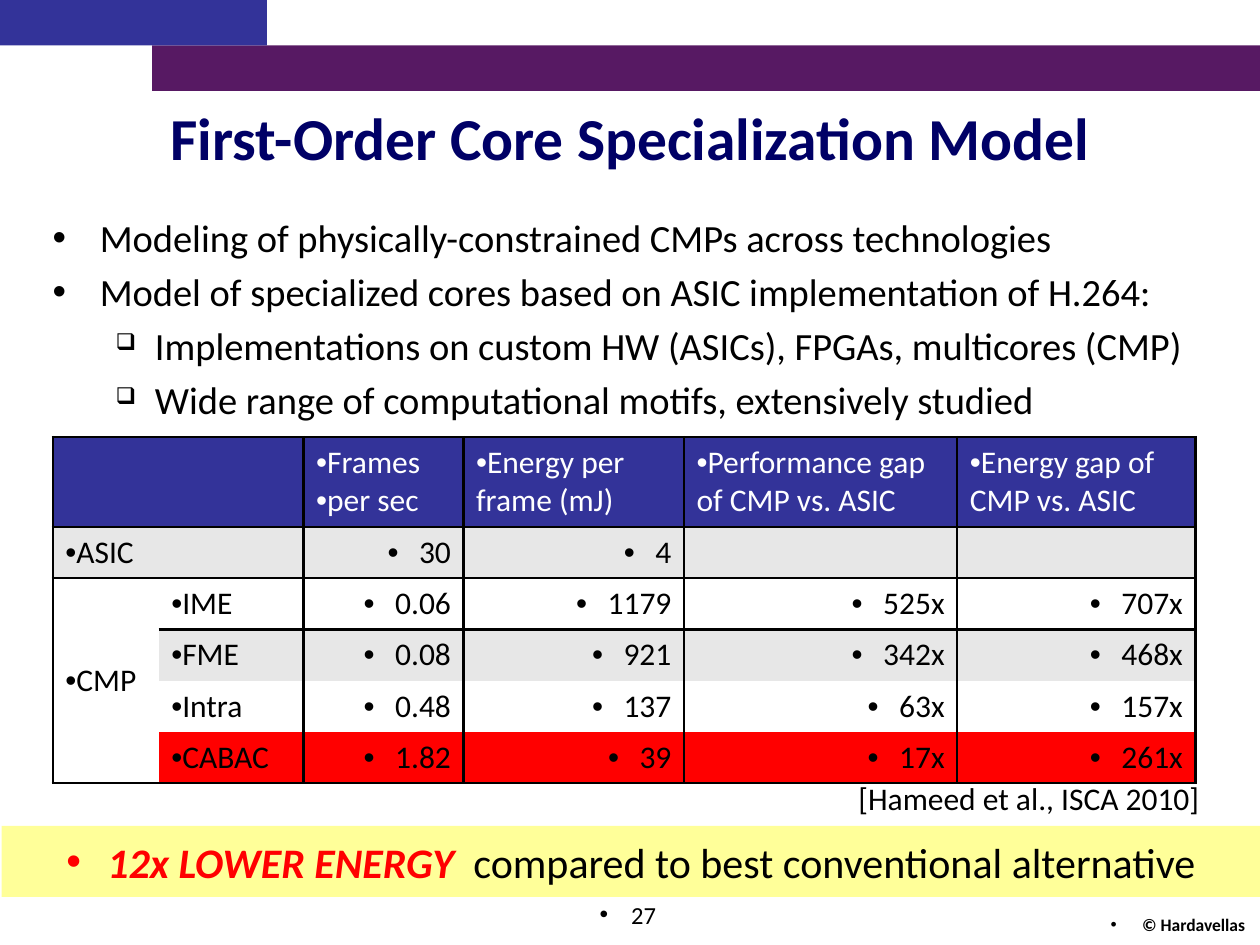
from lxml.etree import SubElement
from pptx import Presentation
from pptx.dml.color import RGBColor
from pptx.enum.shapes import MSO_SHAPE
from pptx.enum.text import MSO_ANCHOR, PP_ALIGN
from pptx.oxml.ns import qn
from pptx.util import Pt

BLUE = RGBColor(0x33, 0x33, 0x99)
PURPLE = RGBColor(0x57, 0x19, 0x63)
NAVY = RGBColor(0x00, 0x00, 0x66)
YELLOW = RGBColor(0xFF, 0xFF, 0x99)
GREY = RGBColor(0xE7, 0xE7, 0xE7)
RED = RGBColor(0xFF, 0x00, 0x00)
BLACK = RGBColor(0x00, 0x00, 0x00)
WHITE = RGBColor(0xFF, 0xFF, 0xFF)

LEFT, MID, RIGHT = PP_ALIGN.LEFT, PP_ALIGN.CENTER, PP_ALIGN.RIGHT
HANG = 18  # bullet indent of centred and right-aligned lines

COLS = [60.5, 82.8, 91.4, 126, 156.2, 136.1]
ROWS = [51.4] + [29.3] * 5
FILLS = [BLUE, GREY, WHITE, GREY, WHITE, RED]
CELLS = [
    ["", "", "Frames\nper sec", "Energy per frame (mJ)",
     "Performance gap of CMP vs. ASIC", "Energy gap of CMP vs. ASIC"],
    ["ASIC", "", "30", "4", "", ""],
    ["CMP", "IME", "0.06", "1179", "525x", "707x"],
    ["", "FME", "0.08", "921", "342x", "468x"],
    ["", "Intra", "0.48", "137", "63x", "157x"],
    ["", "CABAC", "1.82", "39", "17x", "261x"],
]
POINTS = [
    (0, "Modeling of physically-constrained CMPs across technologies"),
    (0, "Model of specialized cores based on ASIC implementation of H.264:"),
    (1, "Implementations on custom HW (ASICs), FPGAs, multicores (CMP)"),
    (1, "Wide range of computational motifs, extensively studied"),
]


def add_run(para, text, size, color=BLACK, **extra):
    run = para.add_run()
    run.text = text
    form = {"name": "Calibri", "size": Pt(size), **extra}
    for key, value in form.items():
        setattr(run.font, key, value)
    run.font.color.rgb = color


def add_mark(para, left=0, hang=0, char="•", scale=100):
    props = para._p.get_or_add_pPr()
    props.set("marL", str(Pt(left)))
    props.set("indent", str(-Pt(hang)))
    SubElement(props, qn("a:buSzPct"), val=str(scale * 1000))
    if char == "•":
        SubElement(props, qn("a:buFont"), typeface="Arial")
    SubElement(props, qn("a:buChar"), char=char)


def add_bar(slide, box, color):
    bar = slide.shapes.add_shape(MSO_SHAPE.RECTANGLE, *map(Pt, box))
    bar.shadow.inherit = False
    bar.fill.solid()
    bar.fill.fore_color.rgb = color
    bar.line.fill.background()
    return bar


def add_box(slide, box, wrap=True, anchor=MSO_ANCHOR.TOP):
    frame = slide.shapes.add_textbox(*map(Pt, box)).text_frame
    frame.word_wrap = wrap
    frame.vertical_anchor = anchor
    return frame


def add_label(slide, box, text, size, align, mark=False, wrap=True,
              anchor=MSO_ANCHOR.TOP, **form):
    para = add_box(slide, box, wrap, anchor).paragraphs[0]
    para.alignment = align
    if mark:
        add_mark(para, HANG, HANG)
    add_run(para, text, size, **form)


def add_list(slide, box):
    frame = add_box(slide, box)
    marks = [(27, 27, "•", 100), (58.5, 22.5, "❑", 60)]
    for i, (level, text) in enumerate(POINTS):
        para = frame.add_paragraph() if i else frame.paragraphs[0]
        para.level = level
        if i:
            para.space_before = Pt(4.4)
        add_mark(para, *marks[level])
        add_run(para, text, 22)


def set_edges(cell, sides):
    props = cell._tc.get_or_add_tcPr()
    for side in "LRTB":
        line = SubElement(props, qn("a:ln" + side), w=str(Pt(1.5)))
        if side in sides:
            fill = SubElement(line, qn("a:solidFill"))
            SubElement(fill, qn("a:srgbClr"), val=str(BLACK))
        else:
            SubElement(line, qn("a:noFill"))


def find_edges(row, col):
    sides = "" if col == 1 else "L"
    sides += "" if col == 0 else "R"
    if row < 3 or (row == 3 and col):
        sides += "T"
    if row in (0, 1, 2, 5):
        sides += "B"
    return sides


def fill_cell(cell, row, col, text):
    set_edges(cell, find_edges(row, col))
    cell.fill.solid()
    cell.fill.fore_color.rgb = FILLS[row]
    if not text:
        return
    digits = row > 0 and col > 1
    hang = HANG if digits else 0
    for i, part in enumerate(text.split("\n")):
        frame = cell.text_frame
        para = frame.add_paragraph() if i else frame.paragraphs[0]
        para.alignment = RIGHT if digits else LEFT
        add_mark(para, hang, hang)
        add_run(para, part, 18, BLACK if row else WHITE)


def add_grid(slide, left, top):
    size = (sum(COLS), sum(ROWS))
    grid = slide.shapes.add_table(len(ROWS), len(COLS), *map(Pt, (left, top, *size))).table
    for col, width in zip(grid.columns, COLS):
        col.width = Pt(width)
    for row, height in zip(grid.rows, ROWS):
        row.height = Pt(height)
    for r, texts in enumerate(CELLS):
        for c, text in enumerate(texts):
            fill_cell(grid.cell(r, c), r, c, text)
    group = grid.cell(2, 0)
    group.merge(grid.cell(5, 0))
    group.vertical_anchor = MSO_ANCHOR.MIDDLE


def add_claim(slide, box):
    frame = add_bar(slide, box, YELLOW).text_frame
    frame.word_wrap = True
    frame.vertical_anchor = MSO_ANCHOR.MIDDLE
    para = frame.paragraphs[0]
    para.alignment = MID
    add_mark(para, HANG, HANG)
    add_run(para, " 12x LOWER ENERGY ", 24, RED, bold=True, italic=True)
    add_run(para, " compared to best conventional alternative", 24)


def main():
    deck = Presentation()
    deck.slide_width, deck.slide_height = Pt(720), Pt(540)
    slide = deck.slides.add_slide(deck.slide_layouts[6])

    # Header bars and title
    add_bar(slide, (87, 26, 633, 26), PURPLE)
    add_bar(slide, (0, 0, 152.5, 26), BLUE)
    add_label(slide, (0, 52, 720, 52), "First-Order Core Specialization Model",
              34, MID, anchor=MSO_ANCHOR.MIDDLE, color=NAVY, bold=True)

    # Claim, points and table
    add_claim(slide, (1, 472, 719, 40.5))
    add_list(slide, (23, 119, 662.5, 130))
    add_grid(slide, 30.2, 249.8)
    add_label(slide, (481, 441.5, 211.5, 29), "[Hameed et al., ISCA 2010]",
              18, RIGHT, wrap=False)

    # Footer
    add_label(slide, (480, 519, 238.5, 18), "© Hardavellas", 10, RIGHT,
              mark=True, bold=True)
    add_label(slide, (214, 510.5, 168, 29), "27", 14, RIGHT, mark=True)

    deck.save("out.pptx")


if __name__ == "__main__":
    main()
